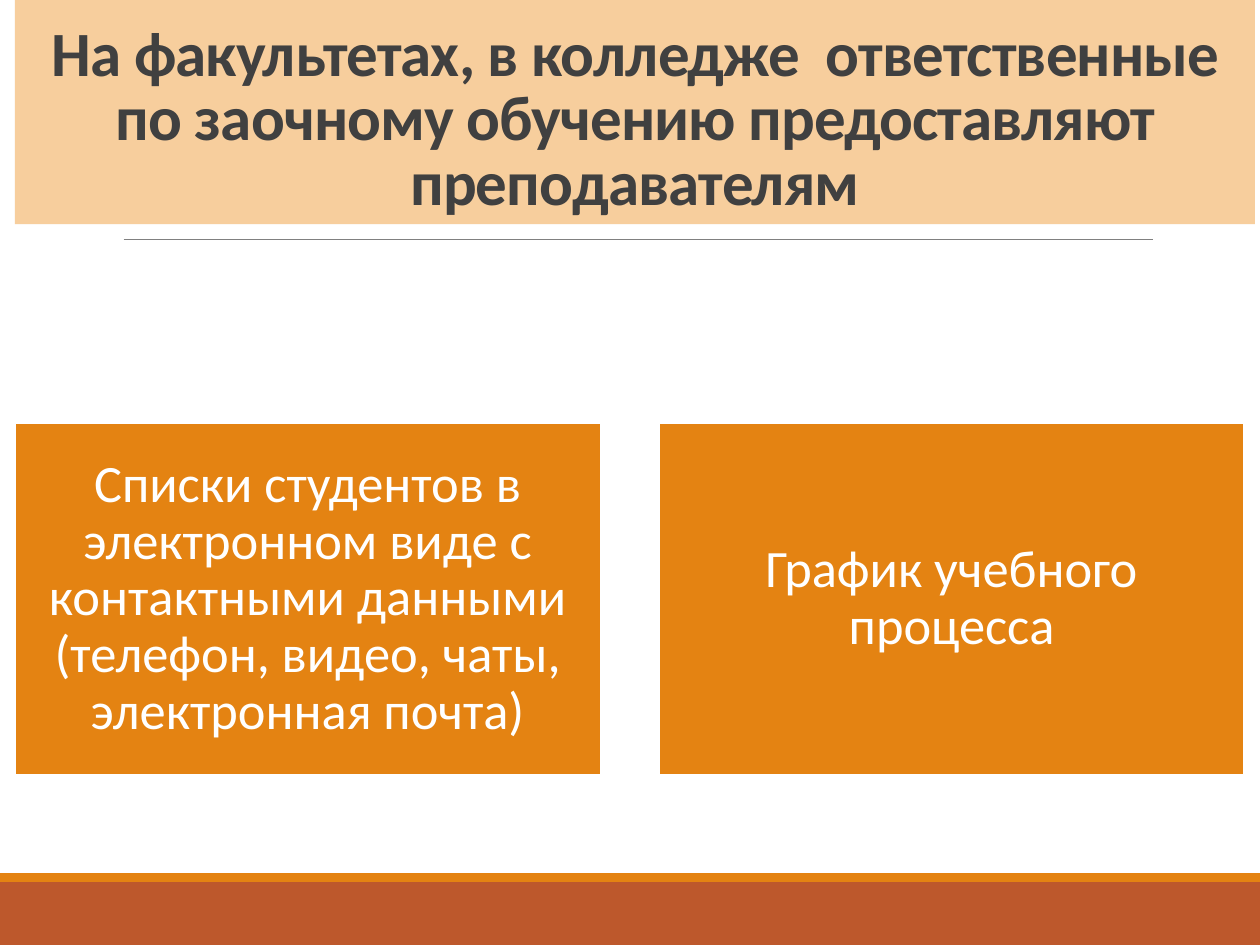
from lxml.etree import SubElement
from pptx import Presentation
from pptx.dml.color import RGBColor
from pptx.enum.shapes import MSO_CONNECTOR, MSO_SHAPE
from pptx.enum.text import MSO_ANCHOR, PP_ALIGN
from pptx.oxml.ns import qn
from pptx.util import Cm, Pt

COLORS = {
    "footer": "BD582C",
    "accent": "E48312",
    "title_fill": "F7CE9D",
    "title_text": "404040",
    "rule": "808080",
    "white": "FFFFFF",
}
TITLE = "На факультетах, в колледже  ответственные по заочному обучению предоставляют преподавателям"
CARDS = [
    "Списки студентов в электронном виде с контактными данными (телефон, видео, чаты, электронная почта)",
    "График учебного процесса",
]
CARD_LEFT, CARD_TOP, CARD_WIDTH, CARD_HEIGHT, CARD_GAP = 0.3, 8.53, 11.81, 7.09, 1.17


def color(name):
    """Return the palette colour with this name."""
    return RGBColor.from_string(COLORS[name])


def add_box(s, x, y, w, h, fill, line=None):
    """Add a flat rectangle, measured in centimetres."""
    sp = s.shapes.add_shape(MSO_SHAPE.RECTANGLE, Cm(x), Cm(y), Cm(w), Cm(h))
    sp.shadow.inherit = False
    sp.fill.solid()
    sp.fill.fore_color.rgb = color(fill)
    if line:
        sp.line.color.rgb = color(line)
        sp.line.width = Pt(1.25)
    else:
        sp.line.fill.background()
    return sp


def add_rule(s, x1, x2, y):
    """Add the thin horizontal rule below the title."""
    rule = s.shapes.add_connector(MSO_CONNECTOR.STRAIGHT, Cm(x1), Cm(y), Cm(x2), Cm(y))
    rule.line.color.rgb = color("rule")
    rule.line.width = Pt(0.5)
    SubElement(rule._element.spPr, qn("a:effectLst"))


def write(sp, text, size, text_color, spacing, anchor, bold=False):
    """Write one centred paragraph and return its run."""
    tf = sp.text_frame
    tf.word_wrap = True
    tf.vertical_anchor = anchor
    p = tf.paragraphs[0]
    p.alignment = PP_ALIGN.CENTER
    p.line_spacing = spacing
    r = p.add_run()
    r.text = text
    r.font.name = "Calibri"
    r.font.size = Pt(size)
    r.font.bold = bold
    r.font.color.rgb = color(text_color)
    return r


def add_title(s):
    """Add the title band with slightly tightened letters."""
    sp = add_box(s, 0.3, 0, 25, 4.52, "title_fill")
    r = write(sp, TITLE, 36, "title_text", 0.85, MSO_ANCHOR.BOTTOM, bold=True)
    r.font._element.set("spc", "-50")


def add_card(s, index, text):
    """Add one card of the row."""
    x = CARD_LEFT + index * (CARD_WIDTH + CARD_GAP)
    sp = add_box(s, x, CARD_TOP, CARD_WIDTH, CARD_HEIGHT, "accent", "white")
    tf = sp.text_frame
    tf.margin_left = tf.margin_right = tf.margin_top = tf.margin_bottom = Cm(0.3)
    write(sp, text, 30, "white", 0.9, MSO_ANCHOR.MIDDLE)


def main():
    """Build the slide and save it."""
    prs = Presentation()
    prs.slide_width, prs.slide_height = Cm(25.4), Cm(19.05)
    s = prs.slides.add_slide(prs.slide_layouts[6])
    add_box(s, 0, 17.78, 25.4, 1.27, "footer")
    add_box(s, 0, 17.6, 25.4, 0.18, "accent")
    add_rule(s, 2.49, 23.24, 4.83)
    add_title(s)
    for index, text in enumerate(CARDS):
        add_card(s, index, text)
    prs.save("out.pptx")


if __name__ == "__main__":
    main()
